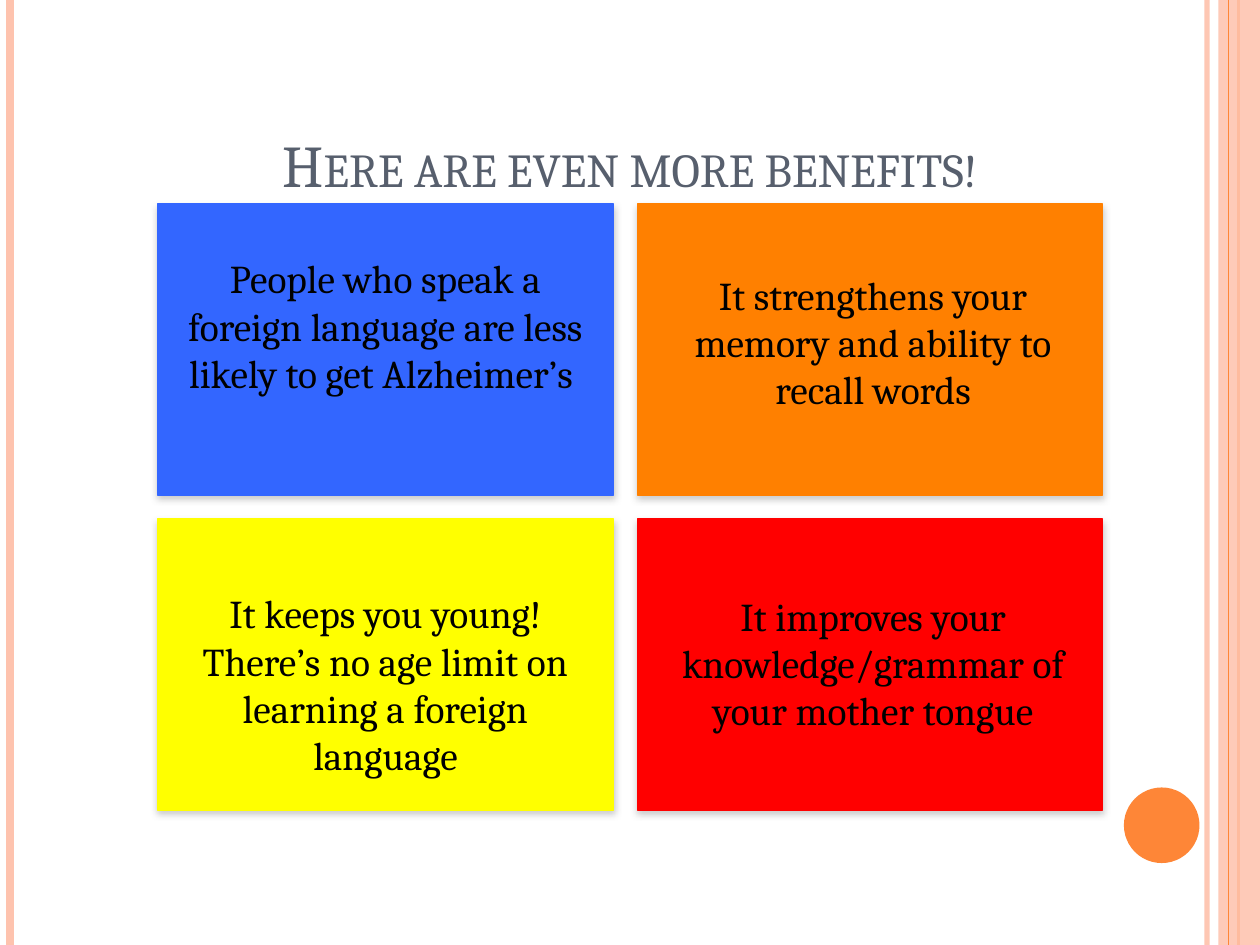
import pptx
import pptx.util
import pptx.dml.color
import pptx.enum.shapes
import pptx.enum.text
import lxml.etree
from pptx.oxml.ns import qn

WIDTH, HEIGHT = 10, 7.5
FONT = "Cambria"
TITLE = "Here are even more benefits!"
# column, row, fill, text top, text
CARDS = [
    (0, 0, "3366FF", 1.97, "People who speak a foreign language are less likely to get Alzheimer’s "),
    (1, 0, "FF8000", 2.10, "It strengthens your memory and ability to recall words"),
    (0, 1, "FFFF00", 4.63, "It keeps you young! There’s no age limit on learning a foreign language"),
    (1, 1, "FF0000", 4.65, "It improves your knowledge/grammar of your mother tongue"),
]
# left, width and text left of each column; top of each row
COLS = [(1.25, 3.62, 1.25), (5.06, 3.69, 5.12)]
ROWS = [1.62, 4.12]
CARD_H, TEXT_W = 2.31, 3.62
# x, colour, points, opacity
BACK_RULES = [(9.58, "FEC3AE", 3, 93), (0.08, "FEC3AE", 4.5, 100), (9.83, "FE8637", 1.5, 100)]
FRONT_RULES = [(9.75, "FE8637", 0.75, 100)]

SHAPE = pptx.enum.shapes.MSO_SHAPE
ANCHOR = pptx.enum.text.MSO_ANCHOR

deck = pptx.Presentation()
deck.slide_width = pptx.util.Inches(WIDTH)
deck.slide_height = pptx.util.Inches(HEIGHT)
slide = deck.slides.add_slide(deck.slide_layouts[6])


def inches(*nums):
    return [pptx.util.Inches(n) for n in nums]


def rgb(code):
    return pptx.dml.color.RGBColor.from_string(code)


def child(parent, tag, **attrs):
    node = lxml.etree.SubElement(parent, qn(tag))
    for key, val in attrs.items():
        node.set(key, str(val))
    return node


def fade(item, share):
    """Set the opacity, in percent, of the item's first colour."""
    color = next(item._element.spPr.iter(qn("a:srgbClr")))
    child(color, "a:alpha", val=share * 1000)


def rule(x, code, points, share):
    """Draw a vertical line over the full height."""
    line = slide.shapes.add_connector(
        pptx.enum.shapes.MSO_CONNECTOR.STRAIGHT, *inches(x, 0, x, HEIGHT))
    line.line.color.rgb = rgb(code)
    line.line.width = pptx.util.Pt(points)
    if share < 100:
        fade(line, share)
    child(line._element.spPr, "a:effectLst")


def block(kind, box, code):
    item = slide.shapes.add_shape(kind, *inches(*box))
    item.shadow.inherit = False
    item.fill.solid()
    item.fill.fore_color.rgb = rgb(code)
    item.line.fill.background()
    return item


def card(box, code):
    item = block(SHAPE.RECTANGLE, box, code)
    item.line.color.rgb = rgb(code)
    item.line.width = pptx.util.Pt(1)
    glow = item._element.spPr.find(qn("a:effectLst"))
    shade = child(glow, "a:outerShdw", blurRad=pptx.util.Pt(4), dist=pptx.util.Pt(1.6),
                  dir=90 * 60000, algn="ctr", rotWithShape=0)
    color = child(shade, "a:srgbClr", val="808080")
    child(color, "a:alpha", val=42000)


def label(box, text, size, code, anchor=ANCHOR.TOP):
    frame = slide.shapes.add_textbox(*inches(*box)).text_frame
    frame.word_wrap = True
    frame.vertical_anchor = anchor
    frame.text = text
    para = frame.paragraphs[0]
    para.alignment = pptx.enum.text.PP_ALIGN.CENTER
    font = para.runs[0].font
    font.name, font.size, font.color.rgb = FONT, pptx.util.Pt(size), rgb(code)
    return font


for args in BACK_RULES:
    rule(*args)
fade(block(SHAPE.RECTANGLE, (9.67, 0, 0.33, HEIGHT), "FEC3AE"), 87)
for args in FRONT_RULES:
    rule(*args)
block(SHAPE.OVAL, (8.92, 6.25, 0.6, 0.6), "FE8637")

head = label((1.25, 0.69, 7.5, 0.94), TITLE, 33.8, "575F6D", ANCHOR.BOTTOM)
head._element.set("cap", "small")

for col, row, code, top, text in CARDS:
    left, wide, start = COLS[col]
    card((left, ROWS[row], wide, CARD_H), code)
    label((start, top, TEXT_W, 1.24 if col else 1.62), text, 22.5, "000000")

deck.save("out.pptx")
